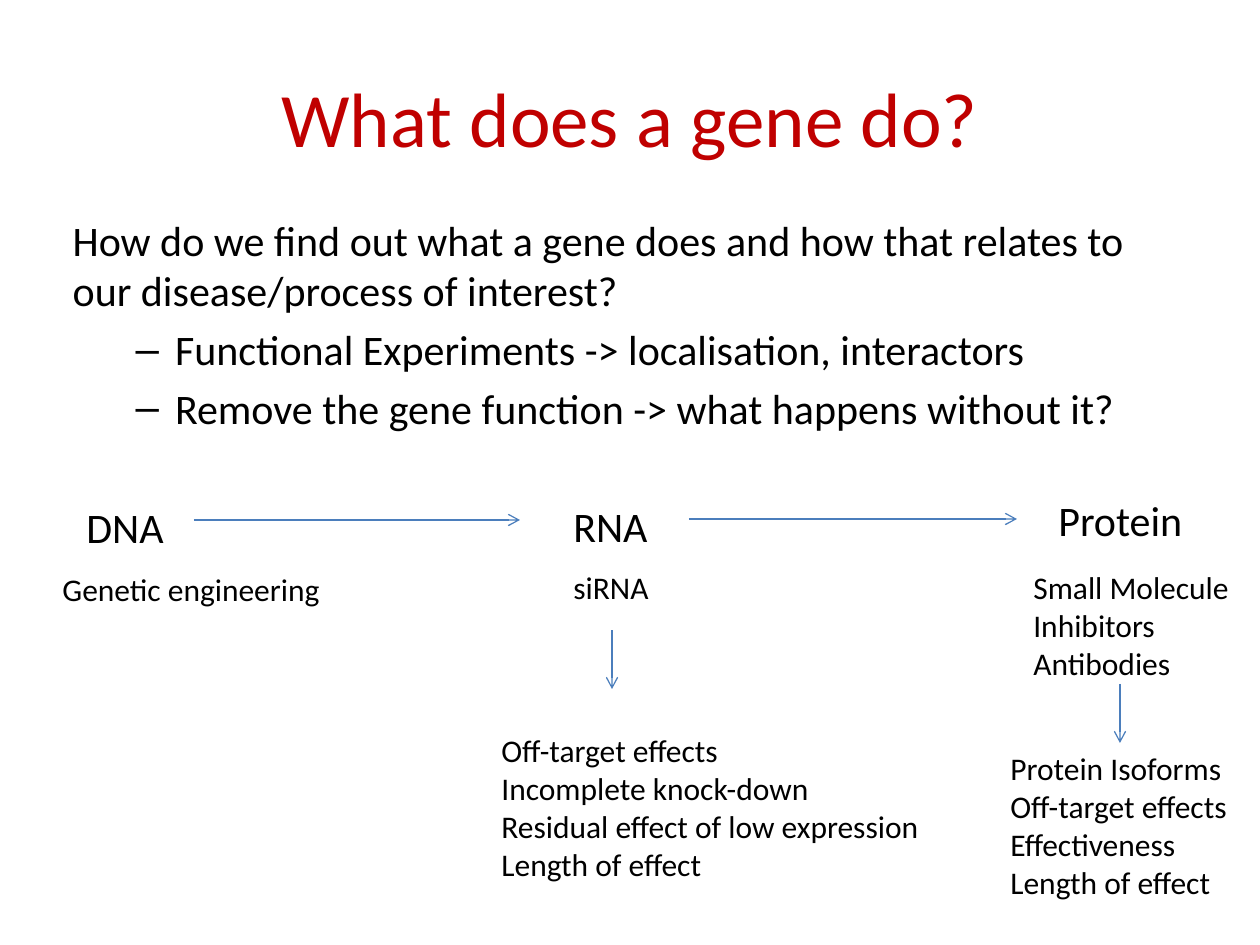
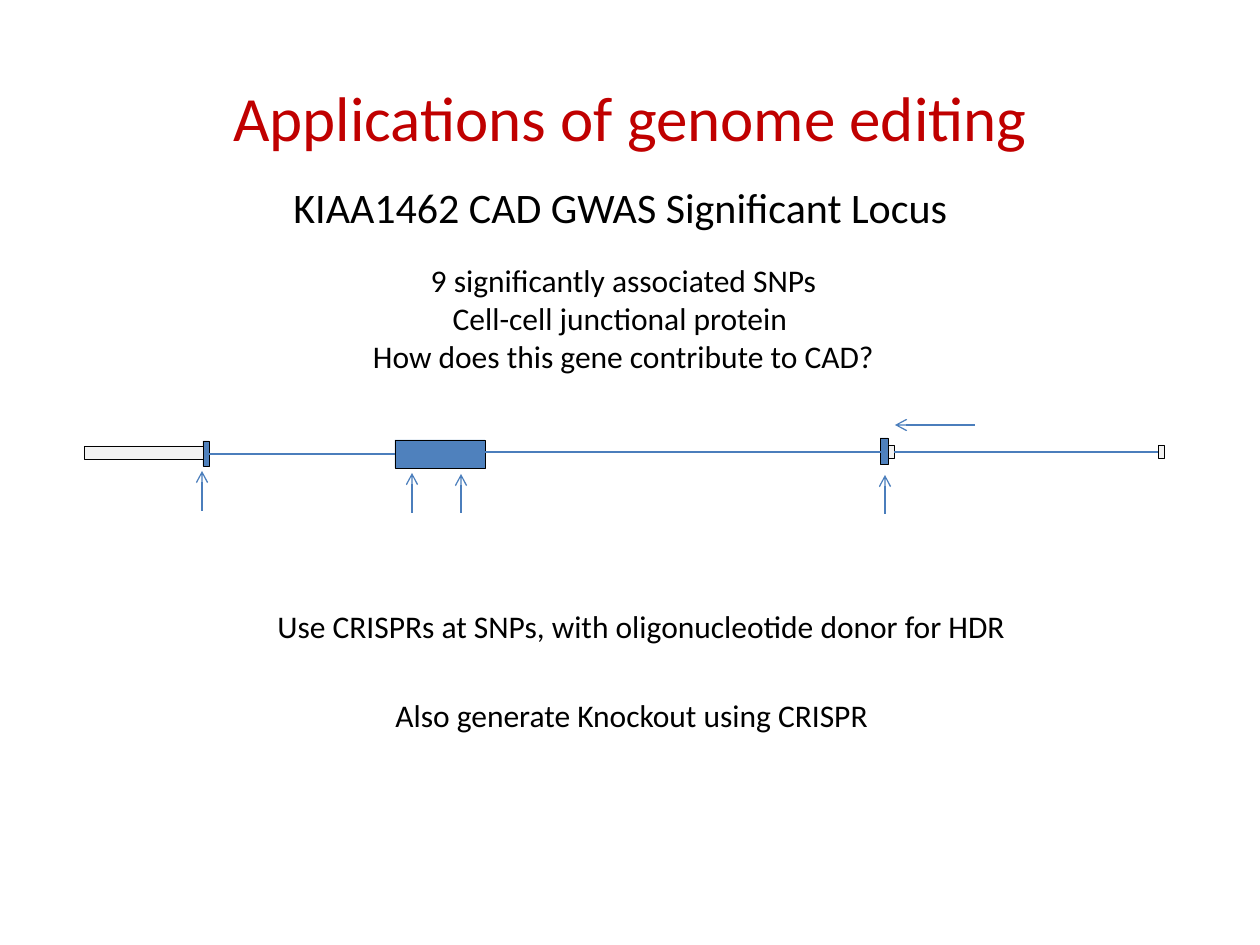
"""Builds two slides on gene function and genome editing."""
from dataclasses import dataclass

from lxml.etree import SubElement
from pptx import Presentation
from pptx.dml.color import RGBColor
from pptx.enum.shapes import MSO_CONNECTOR, MSO_SHAPE
from pptx.enum.text import MSO_ANCHOR, MSO_AUTO_SIZE, PP_ALIGN
from pptx.oxml.ns import qn
from pptx.util import Emu, Pt

PX_PER_INCH = 126


@dataclass(frozen=True)
class Theme:
    font: str = "Calibri"
    title: str = "C00000"
    text: str = "000000"
    line: str = "4B7EBC"
    exon: str = "4F81BD"
    utr: str = "F2F2F2"
    heading: int = 24
    note: int = 18
    line_width: float = 0.75
    outline_width: float = 0.25


T = Theme()
TITLE_BOX = (63, 38, 1134, 157)
BODY_BOX = (60, 208, 1134, 624)

FUNCTION_TITLE = ("What does a gene do?", 44)
FUNCTION_BODY = [
    (0, "How do we find out what a gene does and how that relates to our disease/process of interest?"),
    (1, "Functional Experiments -> localisation, interactors"),
    (1, "Remove the gene function -> what happens without it?"),
]
STAGES = [(74, 495, 103, "DNA"), (561, 494, 101, "RNA"), (1046, 488, 151, "Protein")]
METHODS = [
    (50, 564, 286, ["Genetic engineering"]),
    (561, 562, 101, ["siRNA"]),
]
INHIBITORS = (1021, 562, 239, ["Small Molecule Inhibitors", "Antibodies"])
LIMITS = [
    (489, 725, 449, ["Off-target effects", "Incomplete knock-down",
                     "Residual effect of low expression", "Length of effect"]),
    (998, 743, 246, ["Protein Isoforms", "Off-target effects", "Effectiveness", "Length of effect"]),
]
FLOW_ARROWS = [(194, 520, 520, 520), (689, 519, 1017, 519),
               (612, 630, 612, 689), (1120, 684, 1120, 743)]

EDITING_TITLE = ("Applications of genome editing", 36)
LOCUS = (281, 175, 685, ["KIAA1462 CAD GWAS Significant Locus"])
FINDINGS = (357, 255, 533, ["9 significantly associated SNPs", "Cell-cell junctional protein ",
                            "How does this gene contribute to CAD?"])
REPAIR = (265, 601, 832, ["Use CRISPRs at SNPs, with oligonucleotide donor for HDR"])
KNOCKOUT = (383, 690, 515, ["Also generate Knockout using CRISPR"])
EXONS = [(203, 441, 6, 25), (395, 440, 90, 28), (880, 438, 8, 26)]
UTRS = [(888, 445, 6, 13), (1158, 445, 6, 13), (84, 446, 119, 13)]
INTRONS = [(209, 454, 395, 454), (484, 452, 885, 452), (894, 452, 1158, 452)]
SNP_ARROWS = [(202, 511, 471), (412, 513, 473), (461, 513, 474), (885, 514, 475)]
PROMOTER_ARROW = (975, 425, 895, 425)


def px(*values):
    return [Emu(round(v * 914400 / PX_PER_INCH)) for v in values]


def rgb(code):
    return RGBColor.from_string(code)


def place(sp, box):
    sp.left, sp.top, sp.width, sp.height = px(*box)


def style(p, size, color=T.text):
    for r in p.runs:
        r.font.name = T.font
        r.font.size = Pt(size)
        r.font.color.rgb = rgb(color)


def add_slide(prs, layout, title):
    slide = prs.slides.add_slide(prs.slide_layouts[layout])
    text, size = title
    sp = slide.shapes.title
    place(sp, TITLE_BOX)
    tf = sp.text_frame
    tf.text = text
    tf.vertical_anchor = MSO_ANCHOR.MIDDLE
    tf.paragraphs[0].alignment = PP_ALIGN.CENTER
    style(tf.paragraphs[0], size, T.title)
    return slide


def fill_body(sp, items):
    place(sp, BODY_BOX)
    tf = sp.text_frame
    tf.text = "\n".join(text for _, text in items)
    for p, (level, _) in zip(tf.paragraphs, items):
        p.level = level
        if level == 0:
            p.space_before = Pt(0)
            pPr = p._p.get_or_add_pPr()
            pPr.set("marL", "0")
            pPr.set("indent", "0")
            SubElement(pPr, qn("a:buNone"))
        style(p, T.heading)


def add_text(slide, item, size=T.note, wrap=False, align=PP_ALIGN.LEFT, lines=None):
    x, y, w, paragraphs = item
    h = 13 + round((lines or len(paragraphs)) * size * 1.2 * PX_PER_INCH / 72)
    tf = slide.shapes.add_textbox(*px(x, y, w, h)).text_frame
    tf.word_wrap = wrap
    tf.auto_size = MSO_AUTO_SIZE.SHAPE_TO_FIT_TEXT
    tf.text = "\n".join(paragraphs)
    for p in tf.paragraphs:
        p.alignment = align
        style(p, size)


def add_line(slide, ends, arrow=False):
    cn = slide.shapes.add_connector(MSO_CONNECTOR.STRAIGHT, *px(*ends))
    cn.line.color.rgb = rgb(T.line)
    cn.line.width = Pt(T.line_width)
    spPr = cn._element.spPr
    if arrow:
        SubElement(spPr.find(qn("a:ln")), qn("a:tailEnd"), type="arrow")
    SubElement(spPr, qn("a:effectLst"))


def add_box(slide, box, color):
    sp = slide.shapes.add_shape(MSO_SHAPE.RECTANGLE, *px(*box))
    sp.shadow.inherit = False
    sp.fill.solid()
    sp.fill.fore_color.rgb = rgb(color)
    sp.line.color.rgb = rgb(T.text)
    sp.line.width = Pt(T.outline_width)


def build_function(prs):
    slide = add_slide(prs, 1, FUNCTION_TITLE)
    fill_body(slide.placeholders[1], FUNCTION_BODY)
    for ends in FLOW_ARROWS:
        add_line(slide, ends, arrow=True)
    for x, y, w, name in STAGES:
        add_text(slide, (x, y, w, [name]), T.heading)
    for item in METHODS + LIMITS:
        add_text(slide, item)
    add_text(slide, INHIBITORS, wrap=True, lines=3)


def build_editing(prs):
    slide = add_slide(prs, 5, EDITING_TITLE)
    for boxes, color in ((EXONS, T.exon), (UTRS, T.utr)):
        for box in boxes:
            add_box(slide, box, color)
    for ends in INTRONS:
        add_line(slide, ends)
    add_line(slide, PROMOTER_ARROW, arrow=True)
    for x, start, tip in SNP_ARROWS:
        add_line(slide, (x, start, x, tip), arrow=True)
    add_text(slide, LOCUS, T.heading)
    add_text(slide, FINDINGS, align=PP_ALIGN.CENTER)
    add_text(slide, REPAIR, wrap=True)
    add_text(slide, KNOCKOUT)


def main():
    prs = Presentation()
    prs.slide_width, prs.slide_height = px(1260, 945)
    build_function(prs)
    build_editing(prs)
    prs.save("out.pptx")


if __name__ == "__main__":
    main()
